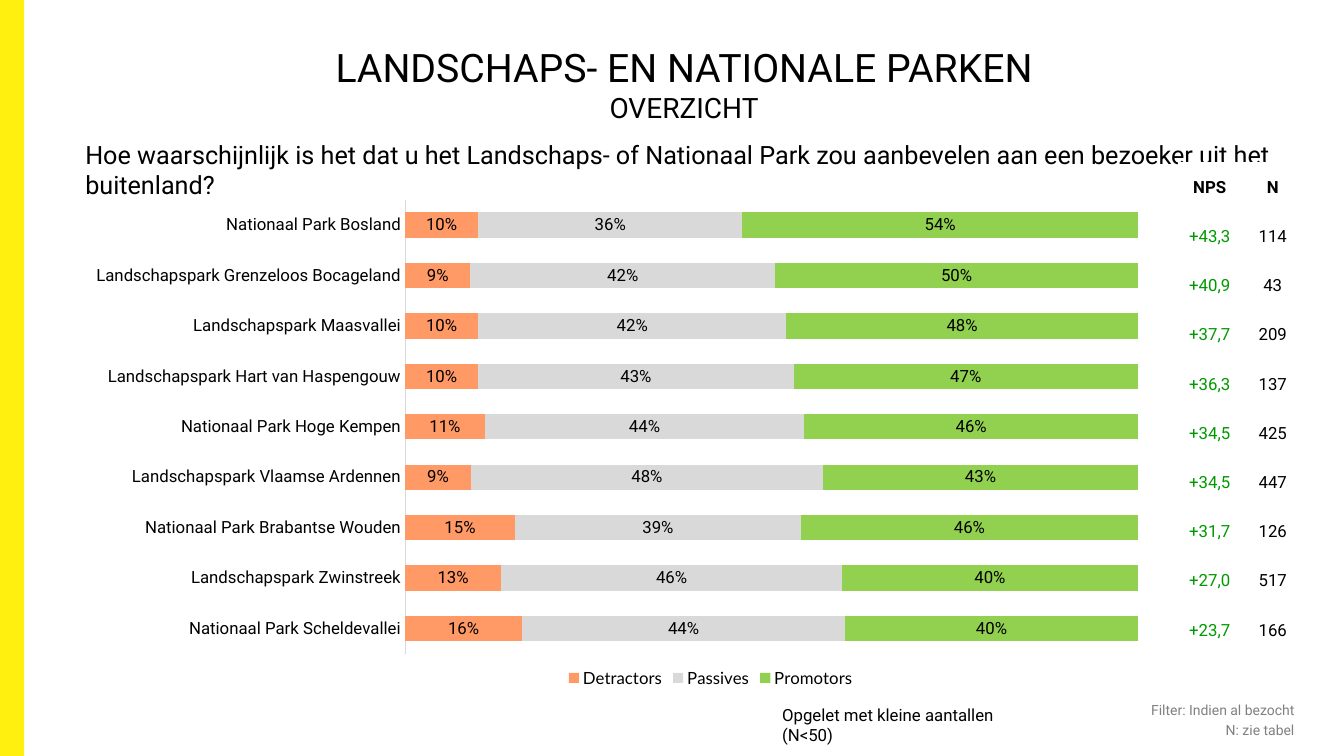
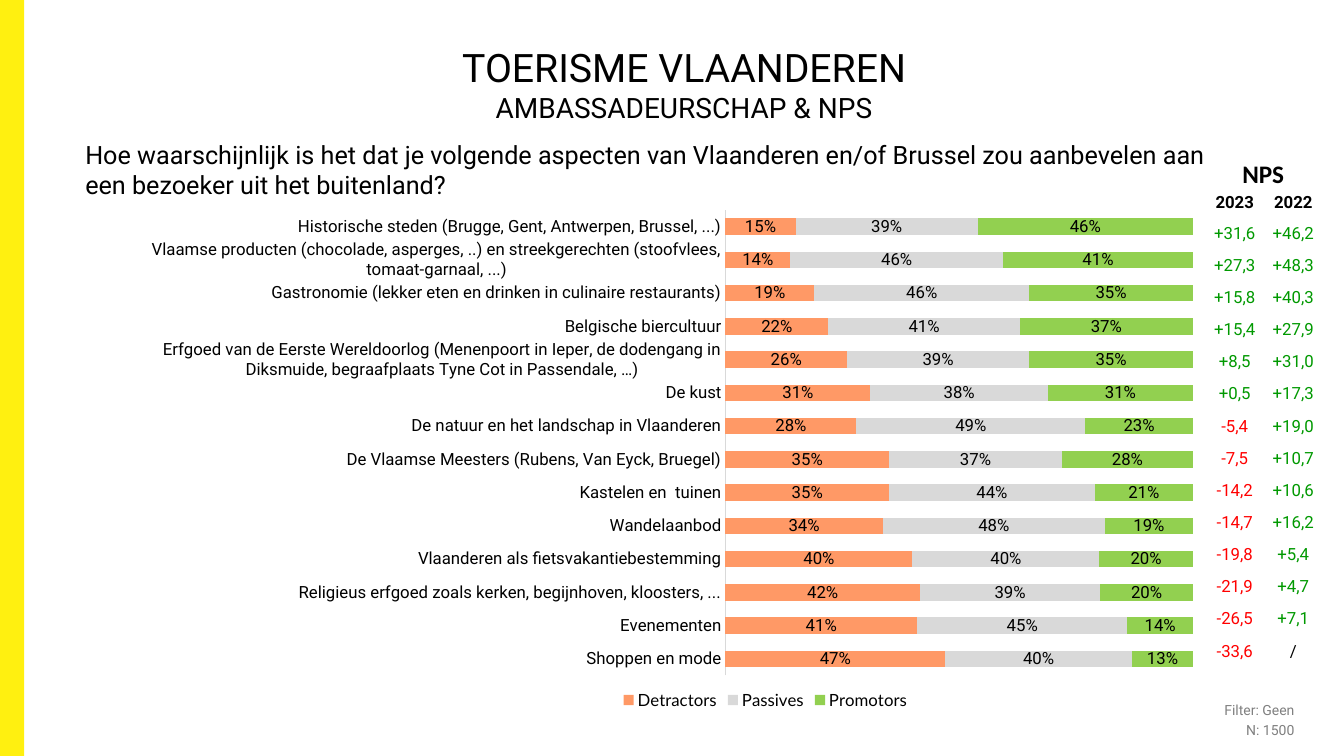
from lxml import etree
from pptx import Presentation
from pptx.chart.data import CategoryChartData
from pptx.dml.color import RGBColor
from pptx.enum.chart import XL_CHART_TYPE as ChartType
from pptx.enum.chart import XL_LABEL_POSITION as LabelPosition
from pptx.enum.chart import XL_LEGEND_POSITION as LegendPosition
from pptx.enum.chart import XL_TICK_MARK as TickMark
from pptx.enum.shapes import MSO_SHAPE as Shape
from pptx.enum.text import MSO_ANCHOR as Anchor
from pptx.enum.text import MSO_AUTO_SIZE as AutoSize
from pptx.enum.text import PP_ALIGN as Align
from pptx.oxml.ns import qn
from pptx.util import Cm, Pt

SLIDE_WIDTH, SLIDE_HEIGHT = 33.87, 19.05
BAND_WIDTH = 0.61
YELLOW, WHITE, BLACK, GREY = "FFF010", "FFFFFF", "000000", "808080"
AXIS_GREY, GREEN, RED = "D9D9D9", "009900", "FF0000"
ANSWER_COLOURS = {"Detractors": "FF9966", "Passives": "D9D9D9", "Promotors": "92D050"}
TEXT_FONT = "Roboto"
PERCENT = "###0%"

PARKS = [
    ("Nationaal Park Bosland", 0.10, 0.36, 0.54),
    ("Landschapspark Grenzeloos Bocageland", 0.09, 0.42, 0.50),
    ("Landschapspark Maasvallei", 0.10, 0.42, 0.48),
    ("Landschapspark Hart van Haspengouw", 0.10, 0.43, 0.47),
    ("Nationaal Park Hoge Kempen", 0.11, 0.44, 0.46),
    ("Landschapspark Vlaamse Ardennen", 0.09, 0.48, 0.43),
    ("Nationaal Park Brabantse Wouden", 0.15, 0.39, 0.46),
    ("Landschapspark Zwinstreek", 0.13, 0.46, 0.40),
    ("Nationaal Park Scheldevallei", 0.16, 0.44, 0.40),
]
PARK_SCORES = [
    ("NPS", "N"),
    ("+43,3", "114"),
    ("+40,9", "43"),
    ("+37,7", "209"),
    ("+36,3", "137"),
    ("+34,5", "425"),
    ("+34,5", "447"),
    ("+31,7", "126"),
    ("+27,0", "517"),
    ("+23,7", "166"),
]
ASPECTS = [
    ("Historische steden (Brugge, Gent, Antwerpen, Brussel, ...)", 0.15, 0.39, 0.46),
    ("Vlaamse producten (chocolade, asperges, ..) en streekgerechten "
     "(stoofvlees, tomaat-garnaal, ...)", 0.14, 0.46, 0.41),
    ("Gastronomie (lekker eten en drinken in culinaire restaurants)", 0.19, 0.46, 0.35),
    ("Belgische biercultuur", 0.22, 0.41, 0.37),
    ("Erfgoed van de Eerste Wereldoorlog (Menenpoort in Ieper, de dodengang in "
     "Diksmuide, begraafplaats Tyne Cot in Passendale, …)", 0.26, 0.39, 0.35),
    ("De kust", 0.31, 0.38, 0.31),
    ("De natuur en het landschap in Vlaanderen", 0.28, 0.49, 0.23),
    ("De Vlaamse Meesters (Rubens, Van Eyck, Bruegel)", 0.35, 0.37, 0.28),
    ("Kastelen en  tuinen", 0.35, 0.44, 0.21),
    ("Wandelaanbod", 0.34, 0.48, 0.19),
    ("Vlaanderen als fietsvakantiebestemming", 0.40, 0.40, 0.20),
    ("Religieus erfgoed zoals kerken, begijnhoven, kloosters, ...", 0.42, 0.39, 0.20),
    ("Evenementen", 0.41, 0.45, 0.14),
    ("Shoppen en mode", 0.47, 0.40, 0.13),
]
ASPECT_SCORES = [
    ("2023", "2022"),
    ("+31,6", "+46,2"),
    ("+27,3", "+48,3"),
    ("+15,8", "+40,3"),
    ("+15,4", "+27,9"),
    ("+8,5", "+31,0"),
    ("+0,5", "+17,3"),
    ("-5,4", "+19,0"),
    ("-7,5", "+10,7"),
    ("-14,2", "+10,6"),
    ("-14,7", "+16,2"),
    ("-19,8", "+5,4"),
    ("-21,9", "+4,7"),
    ("-26,5", "+7,1"),
    ("-33,6", "/"),
]


def rgb(hex_colour):
    return RGBColor.from_string(hex_colour)


def fill_solid(part, hex_colour):
    part.fill.solid()
    part.fill.fore_color.rgb = rgb(hex_colour)


def set_font(font, size, colour=BLACK, name=TEXT_FONT, bold=False):
    font.size, font.name, font.bold = Pt(size), name, bold
    font.color.rgb = rgb(colour)


def add_text(slide, box, lines, sizes, align=Align.LEFT, anchor=Anchor.TOP,
             gap=0, grow=False, **font_style):
    """Write one paragraph per line, with a gap in points between them."""
    frame = slide.shapes.add_textbox(*map(Cm, box)).text_frame
    frame.word_wrap = True
    frame.vertical_anchor = anchor
    frame.auto_size = AutoSize.SHAPE_TO_FIT_TEXT if grow else AutoSize.NONE
    for index, (line, size) in enumerate(zip(lines, sizes)):
        paragraph = frame.add_paragraph() if index else frame.paragraphs[0]
        paragraph.text = line
        paragraph.alignment = align
        if index and gap:
            paragraph.space_before = Pt(gap)
        set_font(paragraph.font, size, **font_style)


def add_slide(deck, title, subtitle, question, question_width, base):
    """Add a slide with the band, headings, question and footer."""
    slide = deck.slides.add_slide(deck.slide_layouts[6])
    band = slide.shapes.add_shape(
        Shape.RECTANGLE, 0, 0, Cm(BAND_WIDTH), Cm(SLIDE_HEIGHT))
    band.shadow.inherit = False
    fill_solid(band, YELLOW)
    band.line.fill.background()
    add_text(slide, (BAND_WIDTH, 0.53, SLIDE_WIDTH - BAND_WIDTH, 3.18),
             (title, subtitle), (28, 20), Align.CENTER, Anchor.MIDDLE)
    add_text(slide, (1.9, 3.38, question_width, 1.35), (question,), (18,))
    add_text(slide, (23.19, 17.55, 9.68, 1.35), base, (10, 10),
             Align.RIGHT, gap=2, colour=GREY)
    return slide


def place_inside_chart(part, index, target=None, **fractions):
    """Give a chart part a fixed layout, in fractions of the chart."""
    for automatic in part.findall(qn("c:layout")):
        part.remove(automatic)
    layout = etree.Element(qn("c:layout"))
    manual = etree.SubElement(layout, qn("c:manualLayout"))
    settings = {"layoutTarget": target} if target else {}
    settings |= {"xMode": "edge", "yMode": "edge", **fractions}
    for tag, value in settings.items():
        etree.SubElement(manual, qn(f"c:{tag}")).set("val", str(value))
    part.insert(index, layout)


def add_answer_chart(slide, box, rows, plot_left, plot_width):
    """Draw the answer shares of each row as a stacked bar."""
    labels, *shares = zip(*rows)
    answers = CategoryChartData(number_format=PERCENT)
    answers.categories = labels
    for answer, values in zip(ANSWER_COLOURS, shares):
        answers.add_series(answer, values)
    chart = slide.shapes.add_chart(
        ChartType.BAR_STACKED_100, *map(Cm, box), answers).chart
    chart.has_title = False
    set_font(chart.font, 10, name="Calibri")

    subjects = chart.category_axis
    subjects.reverse_order = True
    subjects.major_tick_mark = subjects.minor_tick_mark = TickMark.NONE
    subjects.format.line.color.rgb = rgb(AXIS_GREY)
    subjects.format.line.width = Pt(0.75)
    set_font(subjects.tick_labels.font, 12)
    chart.value_axis.has_major_gridlines = False
    chart.value_axis.visible = False

    bars = chart.plots[0]
    bars.gap_width = bars.overlap = 100
    bars.vary_by_categories = False
    for series in bars.series:
        fill_solid(series.format, ANSWER_COLOURS[series.name])
        percentages = series.data_labels
        percentages.show_value = True
        percentages.position = LabelPosition.CENTER
        percentages.number_format = PERCENT
        percentages.number_format_is_linked = False
        set_font(percentages.font, 12)

    chart.has_legend = True
    chart.legend.position = LegendPosition.BOTTOM
    chart.legend.include_in_layout = False
    set_font(chart.legend.font, 12, name="Lato")
    drawing = chart.element.find(qn("c:chart"))
    place_inside_chart(drawing.find(qn("c:plotArea")), 0, "inner",
                       x=plot_left, y=0.02, w=plot_width, h=0.89)
    place_inside_chart(drawing.find(qn("c:legend")), 1, x=0.45, y=0.93)


def score_colour(score):
    return {"+": GREEN, "-": RED}.get(score[0], BLACK)


def add_score_table(slide, left, top, width, scores, header_height, row_height):
    height = header_height + row_height * (len(scores) - 1)
    columns = len(scores[0])
    table = slide.shapes.add_table(
        len(scores), columns, *map(Cm, (left, top, width, height))).table
    table.first_row = table.horz_banding = False
    for column in table.columns:
        column.width = Cm(width / columns)
    for row_index, row in enumerate(scores):
        table.rows[row_index].height = Cm(row_height if row_index else header_height)
        for column_index, score in enumerate(row):
            cell = table.cell(row_index, column_index)
            fill_solid(cell, WHITE)
            cell.vertical_anchor = Anchor.MIDDLE
            cell.margin_left = cell.margin_right = cell.margin_top = Cm(0.03)
            cell.margin_bottom = 0
            paragraph = cell.text_frame.paragraphs[0]
            paragraph.text = score
            paragraph.alignment = Align.CENTER
            set_font(paragraph.font, 12, score_colour(score), bold=row_index == 0)


def add_parks_slide(deck):
    slide = add_slide(
        deck, "LANDSCHAPS- EN NATIONALE PARKEN", "OVERZICHT",
        "Hoe waarschijnlijk is het dat u het Landschaps- of Nationaal Park zou "
        "aanbevelen aan een bezoeker uit het buitenland?",
        30.66, ("Filter: Indien al bezocht", "N: zie tabel"))
    add_answer_chart(slide, (1.9, 4.78, 27.33, 12.85), PARKS, 0.304, 0.676)
    add_score_table(slide, 29.69, 4.09, 3.18, PARK_SCORES, 1.24, 1.24)
    add_text(slide, (19.46, 17.63, 7.01, 0.76),
             ("Opgelet met kleine aantallen (N<50)",), (12,), grow=True)


def add_aspects_slide(deck):
    slide = add_slide(
        deck, "TOERISME VLAANDEREN", "AMBASSADEURSCHAP & NPS",
        "Hoe waarschijnlijk is het dat je volgende aspecten van Vlaanderen en/of "
        "Brussel zou aanbevelen aan een bezoeker uit het buitenland?",
        29.57, ("Filter: Geen", "N: 1500"))
    add_answer_chart(slide, (3.28, 5.03, 27.33, 13.18), ASPECTS, 0.549, 0.431)
    add_score_table(slide, 30.38, 4.72, 2.95, ASPECT_SCORES, 0.74, 0.81)
    add_text(slide, (30.58, 3.86, 2.51, 1.02), ("NPS",), (18,), Align.CENTER,
             grow=True, name="Calibri", bold=True)


def main():
    deck = Presentation()
    deck.slide_width, deck.slide_height = Cm(SLIDE_WIDTH), Cm(SLIDE_HEIGHT)
    add_parks_slide(deck)
    add_aspects_slide(deck)
    deck.save("out.pptx")


if __name__ == "__main__":
    main()
